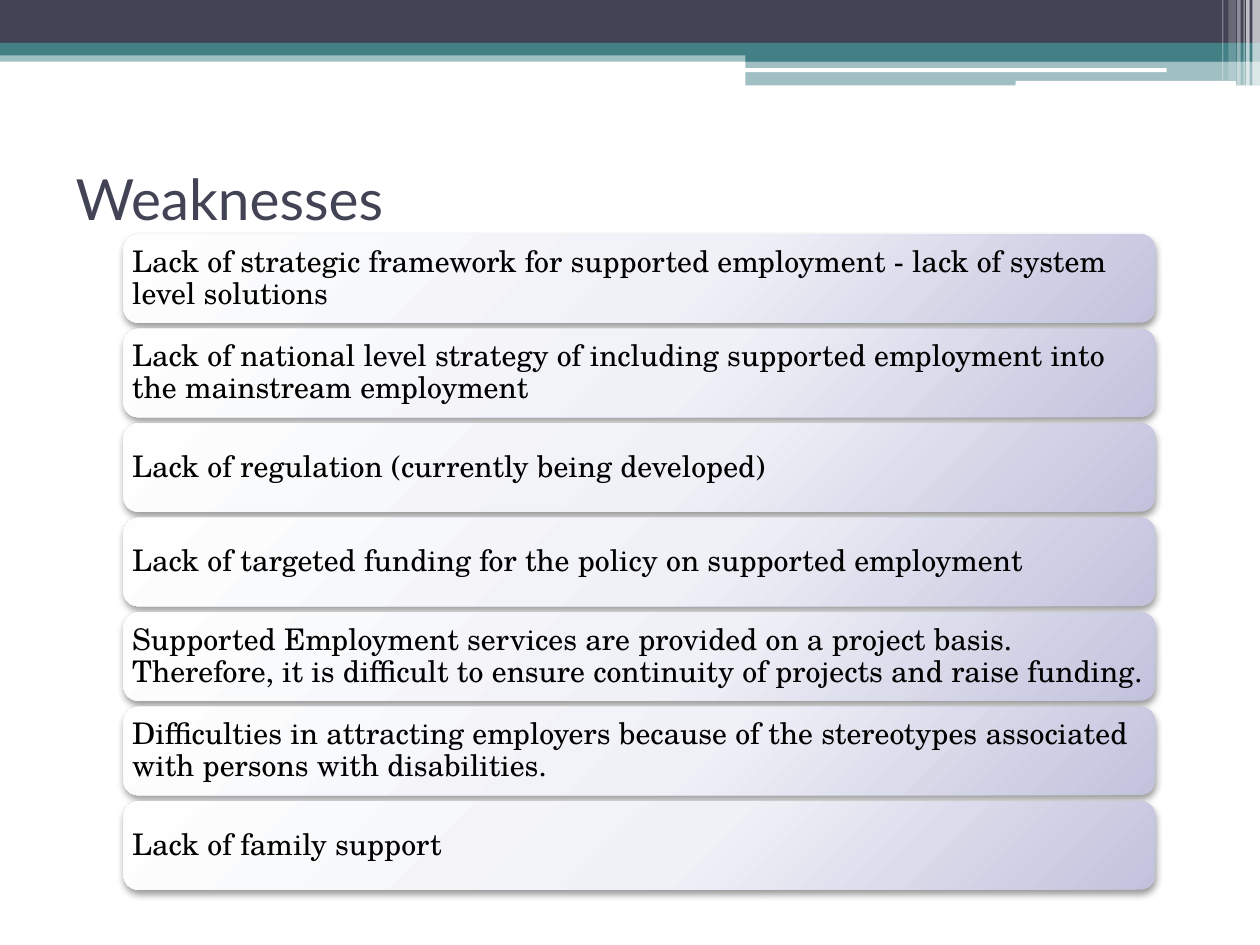
from pptx import Presentation
from pptx.dml.color import RGBColor
from pptx.enum.shapes import MSO_SHAPE
from pptx.enum.text import MSO_ANCHOR, PP_ALIGN
from pptx.oxml import parse_xml
from pptx.oxml.ns import nsdecls, qn
from pptx.util import Pt

TITLE = "Weaknesses"
WEAKNESSES = [
    "Lack of strategic framework for supported employment - lack of system level solutions",
    "Lack of national level strategy of including supported employment into the mainstream employment",
    "Lack of regulation (currently being developed)",
    "Lack of targeted funding for the policy on supported employment",
    "Supported Employment services are provided on a project basis. "
    "Therefore, it is difficult to ensure continuity of projects and raise funding.",
    "Difficulties in attracting employers because of the stereotypes associated "
    "with persons with disabilities.",
    "Lack of family support",
]

THEME = {
    "navy": "424456", "teal": "438086", "white": "FFFFFF", "text": "000000",
    "card_stops": [(0, "FEFEFE"), (55, "F0F1F7"), (100, "C2C2DD")],
    "title_font": "Lato", "title_size": 32.4,
    "body_font": "TeX Gyre Schola", "body_size": 17,
}

# Header pieces, back to front: left, top, width, height, colour, opacity %
HEADER_BARS = [
    (0, 28.8, 720, 6.5, "teal", 50),
    (0, 0, 720, 24.5, "navy", 100),
    (0, 24.5, 720, 7.2, "teal", 100),
    (426, 28.1, 294, 7.2, "teal", 100),
    (426, 34.8, 294, 14, "teal", 50),
]
HEADER_LINES = [
    (425.5, 39, 241.2, 2.2, "white", 100),
    (580.3, 46.2, 126, 2.8, "white", 100),
]
HEADER_STRIPES = [
    (715.7, 0, 4.3, 49, "white", 65),
    (712.1, 0, 2, 49, "white", 65),
    (710.6, 0, 0.7, 49, "white", 60),
    (707, 0, 2, 49, "white", 40),
    (702, 0, 4.3, 46, "white", 20),
    (698.4, 0, 0.7, 46, "white", 30),
]

CARD_LEFT, CARD_TOP, CARD_WIDTH, CARD_HEIGHT = 70.5, 133.9, 589.7, 50.5
CARD_PITCH = 54
CARD_INSET = 2.6  # added to the inset that the rounded corners already give


def color(name):
    return RGBColor.from_string(THEME[name])


def add_plain_shape(slide, kind, left, top, width, height):
    """Add a preset shape with no outline and no shadow."""
    shape = slide.shapes.add_shape(kind, Pt(left), Pt(top), Pt(width), Pt(height))
    shape.line.fill.background()
    shape.shadow.inherit = False
    return shape


def add_header_part(slide, kind, left, top, width, height, color_name, opacity):
    shape = add_plain_shape(slide, kind, left, top, width, height)
    shape.fill.solid()
    shape.fill.fore_color.rgb = color(color_name)
    if opacity < 100:
        fill_color = shape.fill._xPr.find(qn("a:solidFill"))[0]
        fill_color.append(parse_xml(f'<a:alpha {nsdecls("a")} val="{opacity * 1000}"/>'))


def apply_card_style(shape):
    """Give the shape a radial gradient and a soft shadow below."""
    properties = shape._element.spPr
    stops = "".join(
        f'<a:gs pos="{position * 1000}"><a:srgbClr val="{value}"/></a:gs>'
        for position, value in THEME["card_stops"]
    )
    shape.fill.gradient()
    properties.replace(properties.find(qn("a:gradFill")), parse_xml(
        f'<a:gradFill {nsdecls("a")} rotWithShape="1"><a:gsLst>{stops}</a:gsLst>'
        '<a:path path="circle"><a:fillToRect l="-40000" t="-90000" r="140000" b="190000"/>'
        '</a:path></a:gradFill>'))
    properties.find(qn("a:effectLst")).append(parse_xml(
        f'<a:outerShdw {nsdecls("a")} blurRad="{Pt(4.1)}" dist="{Pt(2)}" dir="5400000" '
        'rotWithShape="0"><a:srgbClr val="000000"><a:alpha val="40000"/></a:srgbClr>'
        '</a:outerShdw>'))


def format_text(frame, text, style, color_name, anchor):
    frame.text = text
    frame.word_wrap = True
    frame.vertical_anchor = anchor
    paragraph = frame.paragraphs[0]
    paragraph.alignment = PP_ALIGN.LEFT
    paragraph.font.name = THEME[f"{style}_font"]
    paragraph.font.size = Pt(THEME[f"{style}_size"])
    paragraph.font.color.rgb = color(color_name)
    return paragraph


def add_card(slide, index, text):
    shape = add_plain_shape(slide, MSO_SHAPE.ROUNDED_RECTANGLE, CARD_LEFT,
                            CARD_TOP + index * CARD_PITCH, CARD_WIDTH, CARD_HEIGHT)
    apply_card_style(shape)
    frame = shape.text_frame
    frame.margin_left = frame.margin_right = Pt(CARD_INSET)
    frame.margin_top = frame.margin_bottom = Pt(CARD_INSET)
    paragraph = format_text(frame, text, "body", "text", MSO_ANCHOR.MIDDLE)
    paragraph.line_spacing = 0.9


def main():
    presentation = Presentation()
    presentation.slide_width, presentation.slide_height = Pt(720), Pt(540)
    slide = presentation.slides.add_slide(presentation.slide_layouts[5])

    for bar in HEADER_BARS:
        add_header_part(slide, MSO_SHAPE.RECTANGLE, *bar)
    for line in HEADER_LINES:
        add_header_part(slide, MSO_SHAPE.ROUNDED_RECTANGLE, *line)
    for stripe in HEADER_STRIPES:
        add_header_part(slide, MSO_SHAPE.RECTANGLE, *stripe)

    title = slide.shapes.title
    title.left, title.top, title.width, title.height = Pt(36), Pt(90), Pt(648), Pt(84)
    format_text(title.text_frame, TITLE, "title", "navy", MSO_ANCHOR.TOP)

    for index, text in enumerate(WEAKNESSES):
        add_card(slide, index, text)

    presentation.save("out.pptx")


if __name__ == "__main__":
    main()
